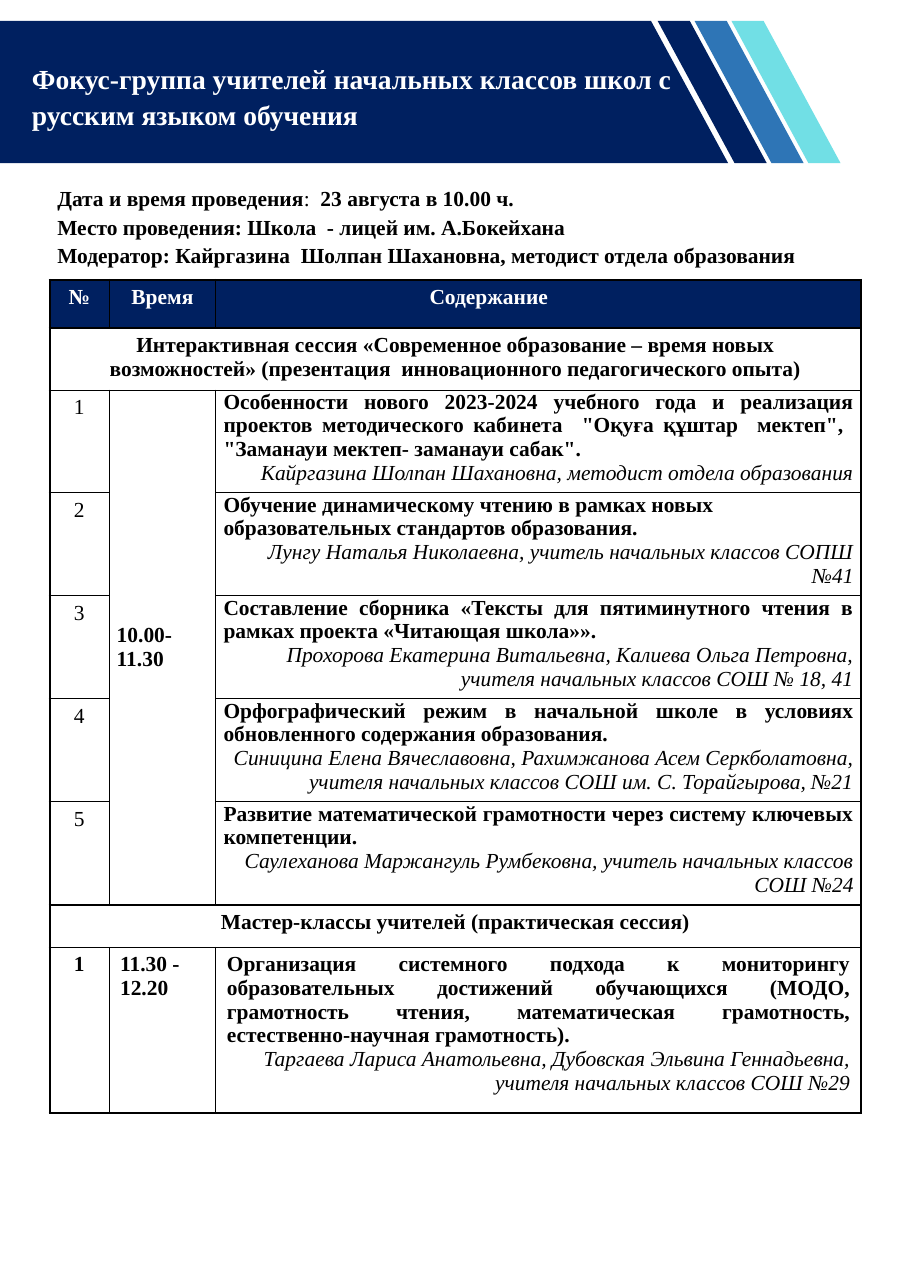
from dataclasses import dataclass

from lxml.etree import SubElement
from pptx import Presentation
from pptx.dml.color import RGBColor
from pptx.enum.shapes import MSO_SHAPE as Shape
from pptx.enum.text import MSO_ANCHOR as Anchor, MSO_AUTO_SIZE as AutoSize, PP_ALIGN as Align
from pptx.oxml.ns import qn
from pptx.util import Inches, Pt

TITLE = "Фокус-группа учителей начальных классов школ с русским языком обучения"
DETAILS = [
    [("Дата и время проведения", True), (":  ", False), ("23 августа в 10.00 ч.", True)],
    [("Место проведения: Школа  - лицей им. А.Бокейхана", True)],
    [("Модератор: Кайргазина  Шолпан Шахановна, методист отдела образования", True)],
]
HEADERS = ["№", "Время", "Содержание"]
SESSION = ("Интерактивная сессия «Современное образование – время новых возможностей» "
           "(презентация  инновационного педагогического опыта)")
SESSION_TIME = "10.00-11.30"
TALKS = [
    ("Особенности нового 2023-2024 учебного года и реализация проектов методического кабинета  "
     "\"Оқуға құштар  мектеп\",  \"Заманауи мектеп- заманауи сабак\".",
     "Кайргазина Шолпан Шахановна, методист отдела образования", Align.JUSTIFY),
    ("Обучение динамическому чтению в рамках новых образовательных стандартов образования.",
     "Лунгу Наталья Николаевна, учитель начальных классов СОПШ №41", Align.LEFT),
    ("Составление сборника «Тексты для пятиминутного чтения в рамках проекта «Читающая школа»».",
     "Прохорова Екатерина Витальевна, Калиева Ольга Петровна, учителя начальных классов СОШ № 18, 41",
     Align.JUSTIFY),
    ("Орфографический режим в начальной школе в условиях обновленного содержания образования.",
     "Синицина Елена Вячеславовна, Рахимжанова Асем Серкболатовна, "
     "учителя начальных классов СОШ им. С. Торайгырова, №21", Align.JUSTIFY),
    ("Развитие математической грамотности через систему ключевых компетенции.",
     "Саулеханова Маржангуль Румбековна, учитель начальных классов СОШ №24", Align.JUSTIFY),
]
WORKSHOPS = "Мастер-классы учителей (практическая сессия)"
WORKSHOP_TIME = "11.30 - 12.20"
WORKSHOP = (
    "Организация системного подхода к мониторингу образовательных достижений обучающихся "
    "(МОДО, грамотность чтения, математическая грамотность, естественно-научная грамотность).",
    "Таргаева Лариса Анатольевна, Дубовская Эльвина Геннадьевна, учителя начальных классов СОШ №29",
    Align.JUSTIFY)

COLUMN_WIDTHS = [0.54, 0.97, 5.86]
ROW_HEIGHTS = [0.44, 0.56] + [0.935] * len(TALKS) + [0.385, 1.5]
TALKS_START = 2
WORKSHOPS_ROW = TALKS_START + len(TALKS)
THICK_ROW_EDGES = {0, 1, WORKSHOPS_ROW, len(ROW_HEIGHTS)}
THICK_COLUMN_EDGES = {0, len(COLUMN_WIDTHS)}
PLAIN_STYLE = "{2D5ABB26-0587-4C30-8999-92F81FD0307C}"


@dataclass(frozen=True)
class Theme:
    font: str = "Times New Roman"
    title_size: float = 18
    body_size: float = 14
    navy: str = "002060"
    blue: str = "2E75B6"
    aqua: str = "71DFE5"
    white: str = "FFFFFF"
    black: str = "000000"
    thick: float = 1.5
    thin: float = 0.75


theme = Theme()


def color(value):
    return RGBColor.from_string(value)


def style_run(run, size, tint, bold, italic=False):
    font = run.font
    font.name, font.size, font.bold, font.italic = theme.font, Pt(size), bold, italic
    font.color.rgb = color(tint)


def paint(shape, tint):
    shape.shadow.inherit = False
    shape.fill.solid()
    shape.fill.fore_color.rgb = color(tint)
    shape.line.fill.background()


def place_text(shape, left, top, width, height):
    shape.left, shape.top, shape.width, shape.height = map(Inches, (left, top, width, height))
    frame = shape.text_frame
    frame.word_wrap, frame.auto_size, frame.vertical_anchor = True, AutoSize.NONE, Anchor.TOP
    return frame


def loosen(paragraph):
    paragraph.alignment = Align.LEFT
    paragraph.line_spacing = 1.1
    paragraph.space_before = paragraph.space_after = Pt(0)


def add_banner(slide):
    top, bottom = 0.19, 1.48
    builder = slide.shapes.build_freeform(0, Inches(top))
    builder.add_line_segments([(Inches(x), Inches(y)) for x, y in
                               [(5.91, top), (6.61, bottom), (0, bottom)]], close=True)
    paint(builder.convert_to_shape(), theme.navy)
    for index, tint in enumerate([theme.navy, theme.blue, theme.aqua]):
        stripe = slide.shapes.add_shape(Shape.PARALLELOGRAM, Inches(5.97 + index * 0.335),
                                        Inches(top), Inches(0.99), Inches(bottom - top))
        stripe.adjustments[0] = 0.705
        stripe.rotation = 180
        stripe._element.spPr.xfrm.set("flipH", "1")
        paint(stripe, tint)


def add_title(slide):
    title = slide.shapes.title
    slide.shapes._spTree.append(title._element)
    frame = place_text(title, 0.19, 0.48, 6.13, 0.71)
    frame.text = TITLE
    loosen(frame.paragraphs[0])
    style_run(frame.paragraphs[0].runs[0], theme.title_size, theme.white, True)


def add_details(slide):
    frame = place_text(slide.placeholders[1], 0.42, 1.61, 7.39, 0.81)
    frame.text = "\n".join("" for _ in DETAILS)
    for paragraph, parts in zip(frame.paragraphs, DETAILS):
        loosen(paragraph)
        properties = paragraph._p.get_or_add_pPr()
        properties.set("marL", "0")
        properties.set("indent", "0")
        SubElement(properties, qn("a:buNone"))
        for text, bold in parts:
            run = paragraph.add_run()
            run.text = text
            style_run(run, theme.body_size, theme.black, bold)


def write_cell(cell, lines, tint=theme.black, tight=False):
    if tight:
        cell.margin_left = cell.margin_right = Inches(0.07)
        cell.margin_top = cell.margin_bottom = 0
    frame = cell.text_frame
    frame.text = "\n".join(line[0] for line in lines)
    for paragraph, (_, alignment, bold, italic) in zip(frame.paragraphs, lines):
        paragraph.alignment = alignment
        style_run(paragraph.runs[0], theme.body_size, tint, bold, italic)


def write_talk(cell, talk, tight):
    topic, speaker, alignment = talk
    write_cell(cell, [(topic, alignment, True, False), (speaker, Align.RIGHT, False, True)], tight=tight)


def border_cell(cell, row, column):
    right = column + (cell.span_width if cell.is_merge_origin else 1)
    bottom = row + (cell.span_height if cell.is_merge_origin else 1)
    edges = [("L", column in THICK_COLUMN_EDGES), ("R", right in THICK_COLUMN_EDGES),
             ("T", row in THICK_ROW_EDGES), ("B", bottom in THICK_ROW_EDGES)]
    for side, is_thick in edges:
        width = Pt(theme.thick if is_thick else theme.thin)
        line = SubElement(cell._tc.get_or_add_tcPr(), qn(f"a:ln{side}"), w=str(width))
        SubElement(SubElement(line, qn("a:solidFill")), qn("a:srgbClr"), val=theme.black)


def add_schedule(slide):
    table = slide.shapes.add_table(
        len(ROW_HEIGHTS), len(COLUMN_WIDTHS), Inches(0.45), Inches(2.54),
        Inches(sum(COLUMN_WIDTHS)), Inches(sum(ROW_HEIGHTS))).table
    table.first_row = table.horz_banding = False
    table._tbl.tblPr.find(qn("a:tableStyleId")).text = PLAIN_STYLE
    for column, width in zip(table.columns, COLUMN_WIDTHS):
        column.width = Inches(width)
    for row, height in zip(table.rows, ROW_HEIGHTS):
        row.height = Inches(height)

    for index, text in enumerate(HEADERS):
        alignment = Align.LEFT if index == 2 else Align.CENTER
        write_cell(table.cell(0, index), [(text, alignment, True, False)], theme.white)
    table.cell(0, 2).margin_left = Inches(1.94)
    for row, text in [(1, SESSION), (WORKSHOPS_ROW, WORKSHOPS)]:
        table.cell(row, 0).merge(table.cell(row, 2))
        write_cell(table.cell(row, 0), [(text, Align.CENTER, True, False)])
    time_cell = table.cell(TALKS_START, 1)
    time_cell.merge(table.cell(WORKSHOPS_ROW - 1, 1))
    time_cell.vertical_anchor = Anchor.MIDDLE
    write_cell(time_cell, [(SESSION_TIME, Align.JUSTIFY, True, False)], tight=True)
    for index, talk in enumerate(TALKS):
        row = TALKS_START + index
        write_cell(table.cell(row, 0), [(str(index + 1), Align.CENTER, False, False)])
        write_talk(table.cell(row, 2), talk, tight=True)
    last = WORKSHOPS_ROW + 1
    write_cell(table.cell(last, 0), [("1", Align.CENTER, True, False)])
    write_cell(table.cell(last, 1), [(WORKSHOP_TIME, Align.LEFT, True, False)])
    write_talk(table.cell(last, 2), WORKSHOP, tight=False)

    for row in range(len(ROW_HEIGHTS)):
        for column in range(len(COLUMN_WIDTHS)):
            cell = table.cell(row, column)
            if not cell.is_spanned:
                border_cell(cell, row, column)
            cell.fill.solid()
            cell.fill.fore_color.rgb = color(theme.white if row else theme.navy)


def main():
    presentation = Presentation()
    presentation.slide_width, presentation.slide_height = Inches(8.27), Inches(11.69)
    slide = presentation.slides.add_slide(presentation.slide_layouts[1])
    add_banner(slide)
    add_title(slide)
    add_schedule(slide)
    add_details(slide)
    presentation.save("out.pptx")


if __name__ == "__main__":
    main()
